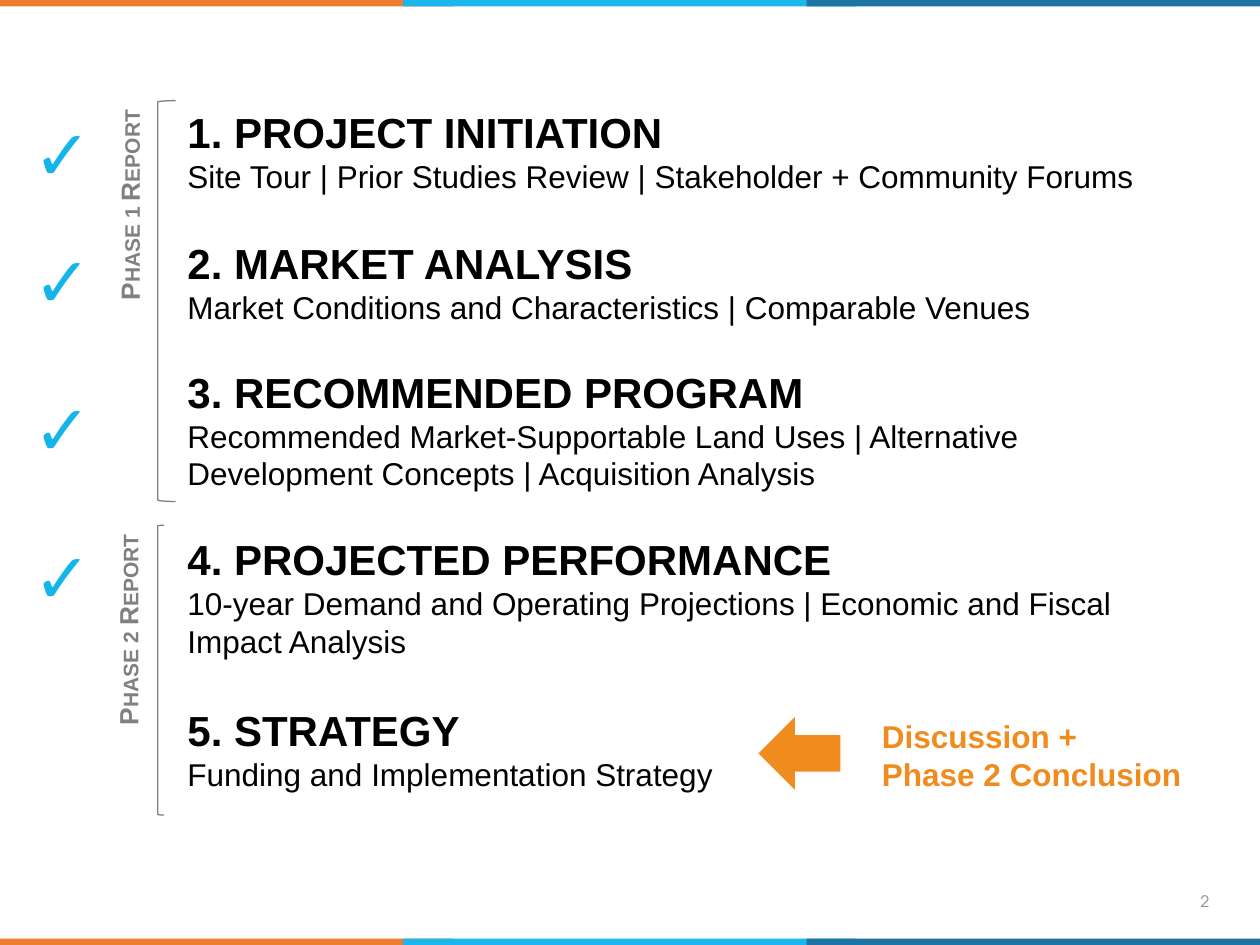
import pptx
import pptx.util
import pptx.dml.color
import pptx.enum.shapes
import pptx.enum.text

Cm = pptx.util.Cm
SHAPE = pptx.enum.shapes.MSO_SHAPE

BLACK = "000000"
GRAY = "808080"
AMBER = "F08B1D"
CHECK_BLUE = "13B5EA"
BAND_COLORS = ["ED7D31", "1BB6EB", "1D74A3"]

STAGES = [
    (2.03, 20.37, 2.06, "1. PROJECT INITIATION",
     "Site Tour | Prior Studies Review | Stakeholder + Community Forums"),
    (4.67, 19.79, 2.06, "2. MARKET ANALYSIS",
     "Market Conditions and Characteristics | Comparable Venues"),
    (7.26, 20.73, 2.82, "3. RECOMMENDED PROGRAM",
     "Recommended Market-Supportable Land Uses | Alternative "
     "Development Concepts | Acquisition Analysis"),
    (10.64, 20.73, 2.82, "4. PROJECTED PERFORMANCE",
     "10-year Demand and Operating Projections | Economic and Fiscal "
     "Impact Analysis"),
    (14.07, 12.7, 2.06, "5. STRATEGY", "Funding and Implementation Strategy"),
]
CHECK_TOPS = [2.11, 4.67, 7.65, 10.64]
PHASES = [
    ("Phase 1 Report", 0.36, 3.61, 2.03, 0.36, 8.08),
    ("Phase 2 Report", 0.33, 12.17, 10.59, 0.13, 5.84),
]


def rgb(color):
    return pptx.dml.color.RGBColor.from_string(color)


def add_text(slide, left, top, width, height, lines, color, font="Arial", wrap=True):
    box = slide.shapes.add_textbox(Cm(left), Cm(top), Cm(width), Cm(height))
    frame = box.text_frame
    frame.text = "\n".join(text for text, size, bold in lines)
    frame.word_wrap = wrap
    for paragraph, (text, size, bold) in zip(frame.paragraphs, lines):
        for run in paragraph.runs:
            run.font.name = font
            run.font.size = pptx.util.Pt(size)
            run.font.bold = bold
            run.font.color.rgb = rgb(color)
    return box


def add_filled(slide, kind, left, top, width, height, color):
    shape = slide.shapes.add_shape(kind, Cm(left), Cm(top), Cm(width), Cm(height))
    shape.shadow.inherit = False
    shape.fill.solid()
    shape.fill.fore_color.rgb = rgb(color)
    shape.line.fill.background()
    return shape


def add_bracket(slide, left, top, width, height):
    bracket = slide.shapes.add_shape(
        SHAPE.LEFT_BRACKET, Cm(left), Cm(top), Cm(width), Cm(height))
    bracket.shadow.inherit = False
    bracket.fill.background()
    bracket.line.color.rgb = rgb(GRAY)
    bracket.line.width = pptx.util.Pt(0.75)


def add_phase_label(slide, left, top, name):
    label = add_text(slide, left, top, 4.5, 0.89, [(name, 15, True)], GRAY, wrap=False)
    label.rotation = 270
    run = label.text_frame.paragraphs[0].runs[0]
    run.font._element.set("cap", "small")


def add_bands(slide):
    for top in (0, 18.92):
        for position, color in enumerate(BAND_COLORS):
            add_filled(slide, SHAPE.RECTANGLE, position * 8.13, top, 9.14, 0.13, color)


def add_page_number(slide):
    number = add_text(slide, 21.79, 17.65, 2.84, 1.02, [("2", 9, False)],
                      "8C8C8C", "TeX Gyre Adventor")
    number.text_frame.vertical_anchor = pptx.enum.text.MSO_ANCHOR.MIDDLE
    number.text_frame.paragraphs[0].alignment = pptx.enum.text.PP_ALIGN.RIGHT


def main():
    deck = pptx.Presentation()
    deck.slide_width = Cm(25.4)
    deck.slide_height = Cm(19.05)
    slide = deck.slides.add_slide(deck.slide_layouts[6])

    add_bands(slide)
    add_page_number(slide)
    for top, width, height, title, tasks in STAGES:
        add_text(slide, 3.53, top, width, height,
                 [(title, 24, True), (tasks, 18, False)], BLACK)
    for top in CHECK_TOPS:
        add_text(slide, 0.43, top, 1.63, 1.96, [("✓", 40, False)],
                 CHECK_BLUE, "Calibri", wrap=False)

    arrow = add_filled(slide, SHAPE.RIGHT_ARROW, 15.29, 14.45, 1.65, 1.47, AMBER)
    arrow.rotation = 180
    add_text(slide, 17.53, 14.33, 6.71, 1.8,
             [("Discussion +", 18, True), ("Phase 2 Conclusion", 18, True)], AMBER)

    for name, label_left, label_top, top, width, height in PHASES:
        add_bracket(slide, 3.18, top, width, height)
        add_phase_label(slide, label_left, label_top, name)

    deck.save("out.pptx")


if __name__ == "__main__":
    main()
